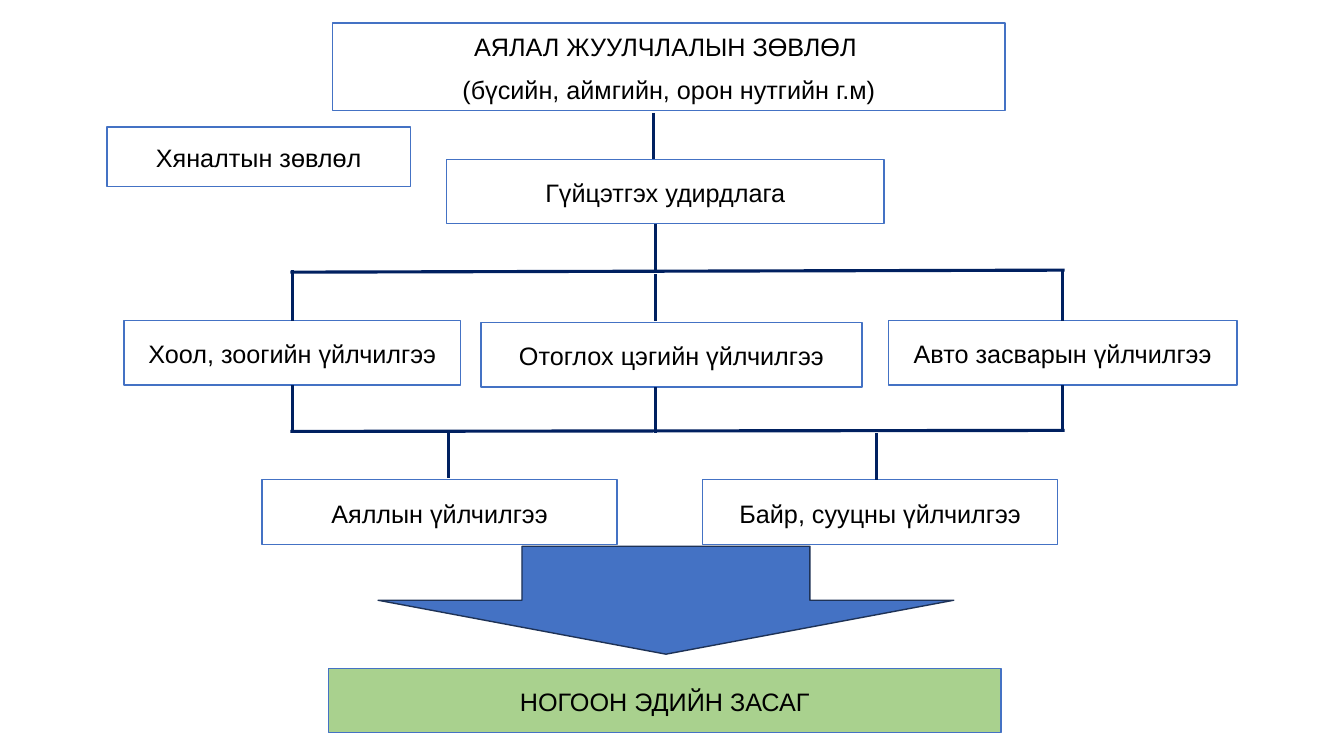
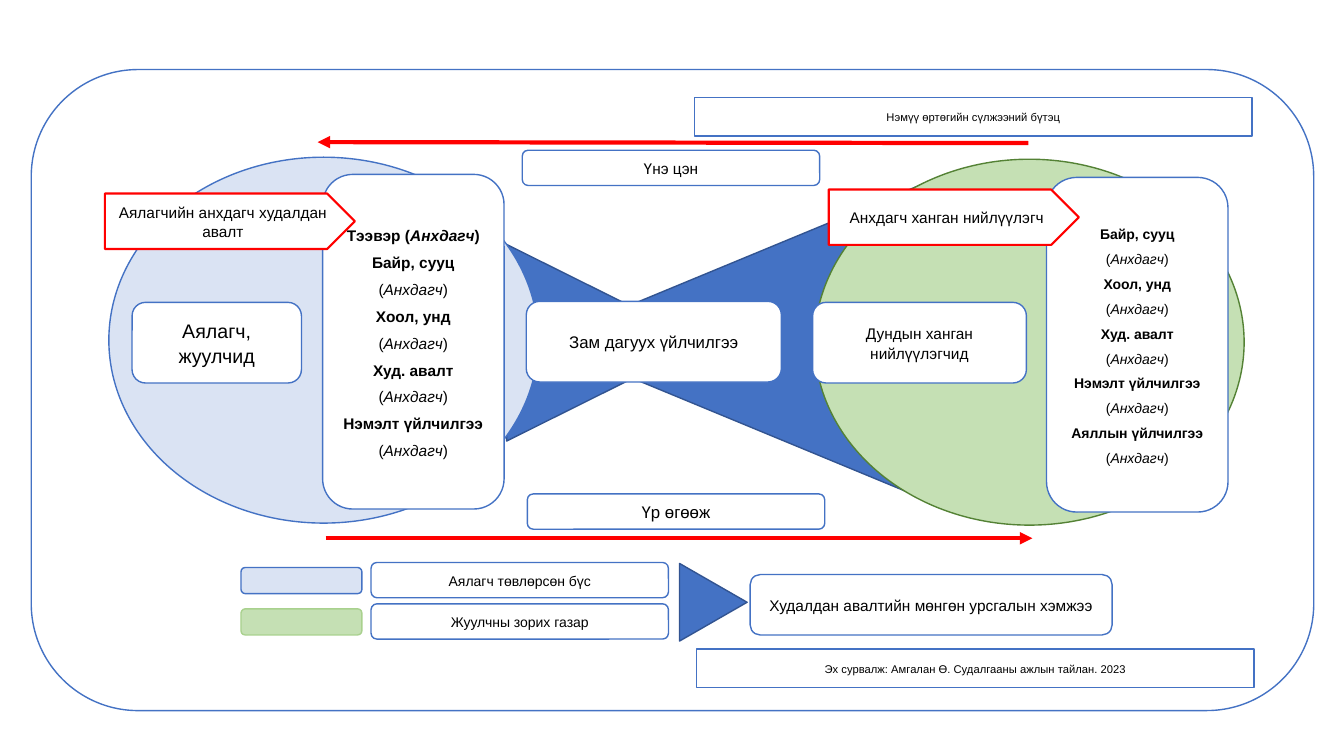
"""Build two slides on tourism governance and the tourism value network."""
import pptx
import pptx.dml.color
import pptx.enum.shapes
import pptx.enum.text
import pptx.oxml.ns
import pptx.util
import lxml.etree

Inches, Pt = pptx.util.Inches, pptx.util.Pt
MSO = pptx.enum.shapes.MSO_SHAPE
WHITE, BLACK, RED, NAVY = "FFFFFF", "000000", "FF0000", "002060"
BLUE, EDGE, ARROW_EDGE, SKY = "4472C4", "325491", "1E3256", "DAE3F3"
MINT, GREEN, FOREST = "C5E0B4", "A9D18E", "548235"
BOLD, ITALIC = {"bold": True}, {"italic": True}


def rgb(value):
    return pptx.dml.color.RGBColor.from_string(value)


def assign(obj, values):
    for name, value in values.items():
        setattr(obj, name, value)


class Deck:
    def __init__(self):
        self.prs = pptx.Presentation()
        assign(self.prs, {"slide_width": Inches(13.33), "slide_height": Inches(7.5)})
        self.s = None

    def slide(self):
        self.s = self.prs.slides.add_slide(self.prs.slide_layouts[6])

    def shape(self, kind, at, fill=WHITE, line=BLUE, weight=1, rotation=0):
        sp = self.s.shapes.add_shape(kind, *map(Inches, at))
        sp.shadow.inherit = False
        sp.rotation = rotation
        sp.fill.solid()
        sp.fill.fore_color.rgb = rgb(fill)
        sp.line.color.rgb = rgb(line)
        sp.line.width = Pt(weight)
        return sp

    def box(self, at, paragraphs, size, kind=MSO.ROUNDED_RECTANGLE, spacing=1.06, after=8, **look):
        sp = self.shape(kind, at, **look)
        tf = sp.text_frame
        assign(tf, {"word_wrap": True, "vertical_anchor": pptx.enum.text.MSO_ANCHOR.MIDDLE})
        if isinstance(paragraphs, str):
            paragraphs = [[(paragraphs, {})]]
        for i, runs in enumerate(paragraphs):
            p = tf.add_paragraph() if i else tf.paragraphs[0]
            assign(p, {"alignment": pptx.enum.text.PP_ALIGN.CENTER,
                       "line_spacing": spacing, "space_after": Pt(after)})
            for text, style in runs:
                r = p.add_run()
                r.text = text
                assign(r.font, {"name": "Arial", "size": Pt(size), **style})
                r.font.color.rgb = rgb(BLACK)
        return sp

    def rect(self, at, paragraphs, size=18, **look):
        return self.box(at, paragraphs, size, MSO.RECTANGLE, 1.07, **look)

    def line(self, start, end, color=NAVY, weight=2.25, begin=None, finish=None, arrow=False):
        cx = self.s.shapes.add_connector(
            pptx.enum.shapes.MSO_CONNECTOR.STRAIGHT, *map(Inches, (*start, *end)))
        cx.line.color.rgb = rgb(color)
        cx.line.width = Pt(weight)
        if begin:
            cx.begin_connect(*begin)
        if finish:
            cx.end_connect(*finish)
        qn = pptx.oxml.ns.qn
        if arrow:
            lxml.etree.SubElement(cx.line._get_or_add_ln(), qn("a:tailEnd"), type="triangle")
        lxml.etree.SubElement(cx._element.spPr, qn("a:effectLst"))


def governance(d):
    d.slide()
    d.rect((3.3, 0.23, 6.67, 0.87), [[("АЯЛАЛ ЖУУЛЧЛАЛЫН ЗӨВЛӨЛ ", {})],
                                     [("(бүсийн, аймгийн, орон нутгийн г.м)", {})]])
    d.rect((4.43, 1.58, 4.34, 0.64), "Гүйцэтгэх удирдлага")
    food = d.rect((1.23, 3.18, 3.34, 0.64), "Хоол, зоогийн үйлчилгээ")
    d.rect((4.77, 3.2, 3.78, 0.64), "Отоглох цэгийн үйлчилгээ")
    repair = d.rect((8.81, 3.18, 3.46, 0.64), "Авто засварын үйлчилгээ")
    for x, text in ((2.6, "Аяллын үйлчилгээ"), (6.97, "Байр, сууцны үйлчилгээ")):
        d.rect((x, 4.76, 3.52, 0.64), text)
    d.rect((3.26, 6.63, 6.67, 0.64), "НОГООН ЭДИЙН ЗАСАГ", fill=GREEN)
    d.rect((1.06, 1.26, 3.01, 0.59), "Хяналтын зөвлөл")

    for x, y in ((6.48, 1.12), (6.5, 2.22), (6.5, 2.72), (6.5, 3.84), (4.45, 4.28), (8.69, 4.3)):
        d.line((x, y), (x, y + 0.46))
    for left, right in ((2.7, 2.68), (4.28, 4.27)):
        d.line((2.88, left), (10.56, right))
    for x, sp in ((2.9, food), (10.54, repair)):
        d.line((x, 2.68), (x, 3.18), finish=(sp, 0))
        d.line((x, 3.82), (x, 4.28), begin=(sp, 2))
    d.shape(MSO.DOWN_ARROW, (3.75, 5.42, 5.71, 1.07), BLUE, ARROW_EDGE)


def value_network(d):
    primary = [("(", {}), ("Анхдагч", ITALIC), (")", {})]
    shared = ["Байр, сууц", "Хоол, унд", "Худ. авалт", "Нэмэлт үйлчилгээ"]

    def service_list(names):
        return [p for name in names for p in ([(name, BOLD)], primary)]

    def triangle(at, rotation):
        d.shape(MSO.ISOSCELES_TRIANGLE, at, BLUE, EDGE, rotation=rotation)

    def tag(x, y, text):
        d.box((x, y, 2.48, 0.55), text, 11, MSO.PENTAGON, line=RED, weight=1.5)

    d.slide()
    d.shape(MSO.ROUNDED_RECTANGLE, (0.31, 0.69, 12.72, 6.36))
    triangle((5.72, 1.44, 3.22, 3.89), 270)
    triangle((5.03, 2.42, 1.95, 1.96), 90)
    d.shape(MSO.OVAL, (1.08, 1.56, 4.26, 3.63), SKY)
    d.box((1.31, 3, 1.68, 0.8), "Аялагч, жуулчид", 14)
    d.box((5.22, 2.99, 2.53, 0.8), "Зам дагуух үйлчилгээ", 12)
    d.shape(MSO.OVAL, (8.08, 1.58, 4.26, 3.63), MINT, FOREST)
    d.box((10.38, 1.76, 1.8, 3.32), service_list(shared + ["Аяллын үйлчилгээ"]), 10,
          spacing=1.15, after=4)
    d.box((8.06, 3, 2.12, 0.8), "Дундын ханган нийлүүлэгчид", 11)
    for start, end in (((10.2, 1.42), (3.15, 1.41)), ((3.23, 5.34), (10.24, 5.34))):
        d.line(start, end, RED, 3, arrow=True)
    d.box((5.18, 1.49, 2.95, 0.35), "Үнэ цэн", 11)
    d.box((5.23, 4.9, 2.95, 0.35), "Үр өгөөж", 12)
    transport = [("Тээвэр (", BOLD), ("Анхдагч", {**BOLD, **ITALIC}), (")", BOLD)]
    d.box((3.2, 1.73, 1.8, 3.32), [transport] + service_list(shared), 11, spacing=1.15, after=4)
    tag(1.04, 1.92, "Аялагчийн анхдагч худалдан авалт")
    tag(8.22, 1.88, "Анхдагч ханган нийлүүлэгч")

    legend = ((SKY, BLUE, "Аялагч төвлөрсөн бүс"), (MINT, GREEN, "Жуулчны зорих газар"))
    for i, (fill, line, text) in enumerate(legend):
        y = 5.58 + 0.41 * i
        d.shape(MSO.ROUNDED_RECTANGLE, (2.39, y + 0.05, 1.2, 0.26), fill, line)
        d.box((3.68, y, 2.95, 0.35), text, 10)
    triangle((6.69, 5.64, 0.77, 0.67), 90)
    d.box((7.44, 5.7, 3.59, 0.6), "Худалдан авалтийн мөнгөн урсгалын хэмжээ", 11)
    d.rect((6.91, 6.44, 5.53, 0.38), "Эх сурвалж: Амгалан Ө. Судалгааны ажлын тайлан. 2023", 8)
    d.rect((6.89, 0.97, 5.53, 0.38), "Нэмүү өртөгийн сүлжээний бүтэц", 8)


def main():
    d = Deck()
    governance(d)
    value_network(d)
    d.prs.save("out.pptx")


if __name__ == "__main__":
    main()
